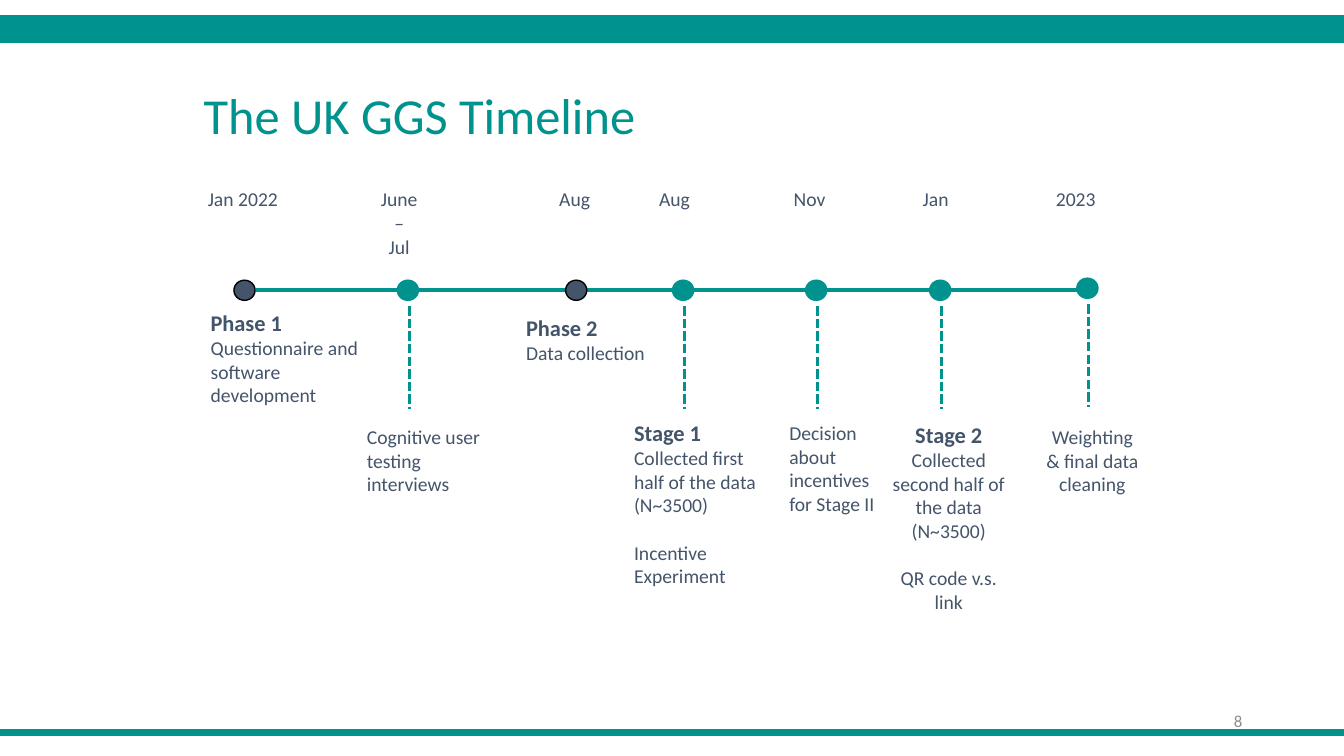
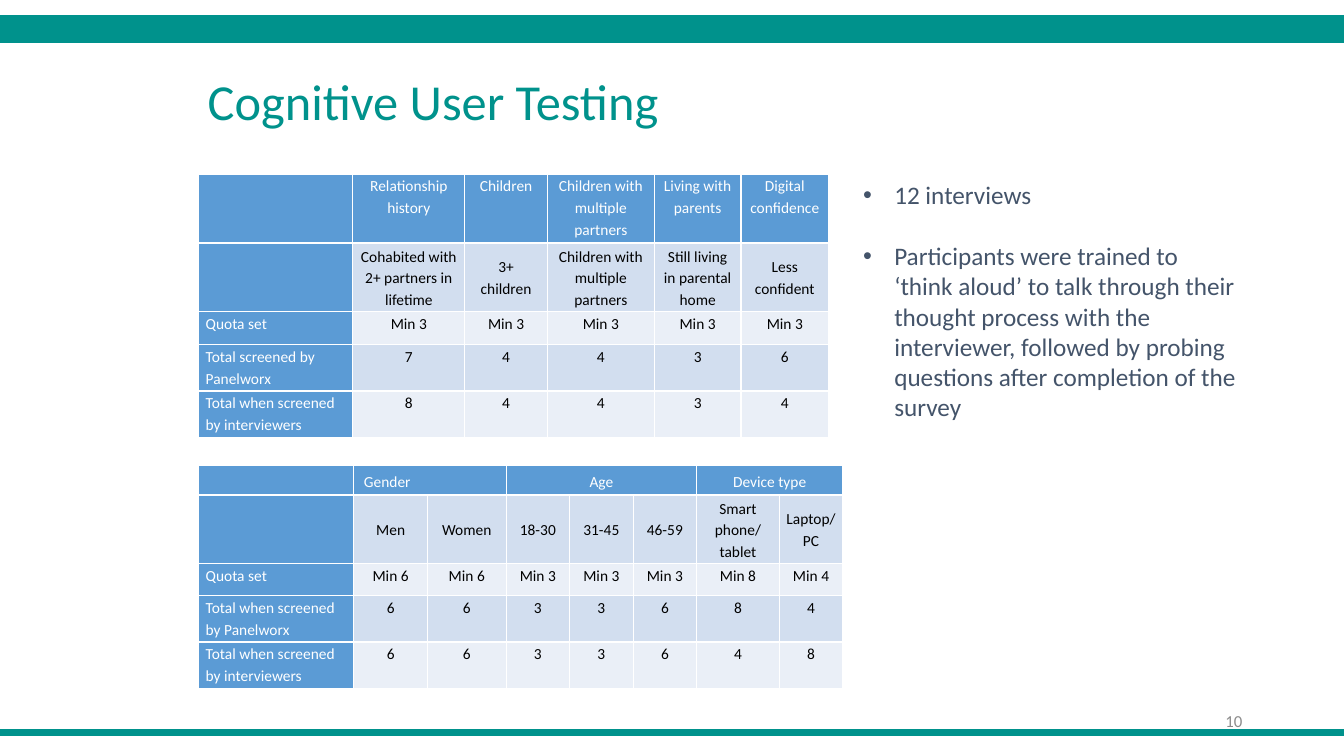
"""Build two survey slides: a project timeline and the user testing quotas."""
from lxml.etree import SubElement
from pptx import Presentation
from pptx.dml.color import RGBColor
from pptx.enum.dml import MSO_LINE
from pptx.enum.shapes import MSO_CONNECTOR, MSO_SHAPE
from pptx.enum.text import MSO_ANCHOR, MSO_AUTO_SIZE, PP_ALIGN
from pptx.oxml.ns import qn
from pptx.util import Inches, Pt

TEAL = RGBColor(0x00, 0x92, 0x8C)
SLATE = RGBColor(0x44, 0x54, 0x6A)
GREY = RGBColor(0x8C, 0x8C, 0x8C)
BLACK = RGBColor(0, 0, 0)
WHITE = RGBColor(0xFF, 0xFF, 0xFF)
BLUE = RGBColor(0x5B, 0x9B, 0xD5)
PALE = RGBColor(0xD2, 0xDE, 0xEF)
LIGHT = RGBColor(0xEA, 0xEF, 0xF7)
LEFT, MID, RIGHT = PP_ALIGN.LEFT, PP_ALIGN.CENTER, PP_ALIGN.RIGHT


def write(frame, lines, color, align=LEFT):
    """Fill a text frame with (text, size, bold, space before) lines."""
    frame.word_wrap = True
    for at, (text, size, bold, gap) in enumerate(lines):
        para = frame.add_paragraph() if at else frame.paragraphs[0]
        para.alignment = align
        para.space_before = Pt(gap)
        run = para.add_run()
        run.text = text
        font = run.font
        font.name, font.size, font.bold = "Calibri", Pt(size), bold
        font.color.rgb = color


def paint(shape, fill, line):
    """Give a shape a flat fill and a thin outline."""
    shape.shadow.inherit = False
    shape.fill.solid()
    shape.fill.fore_color.rgb = fill
    shape.line.color.rgb = line
    shape.line.width = Pt(1)


prs = Presentation()
prs.slide_width, prs.slide_height = Inches(13.33), Inches(7.5)

pages = []
for layout, title, number, left, top in [
    (5, "The UK GGS Timeline", "8", 1.92, 0.78),
    (1, "Cognitive User Testing", "10", 1.96, 0.65),
]:
    page = prs.slides.add_slide(prs.slide_layouts[layout])
    head = page.shapes.title
    head.left, head.top = Inches(left), Inches(top)
    head.width, head.height = Inches(9.4), Inches(0.71)
    head.text_frame.vertical_anchor = MSO_ANCHOR.TOP
    head.text_frame.auto_size = MSO_AUTO_SIZE.NONE
    write(head.text_frame, [(title, 36, False, 0)], TEAL)
    foot = page.shapes.add_textbox(Inches(9.42), Inches(6.95), Inches(3), Inches(0.4))
    foot.text_frame.vertical_anchor = MSO_ANCHOR.MIDDLE
    write(foot.text_frame, [(number, 12, False, 0)], GREY, RIGHT)
    for y, high in [(0.16, 0.26), (7.24, 0.05)]:
        band = page.shapes.add_shape(
            MSO_SHAPE.RECTANGLE, 0, Inches(y), prs.slide_width, Inches(high))
        paint(band, TEAL, TEAL)
    pages.append(page)
time, test = pages

events = [
    (2.43, 2.88, True, 2.41, ["Jan 2022"]),
    (4.05, 2.88, False, 3.96, ["June", "–", "Jul"]),
    (5.72, 2.88, True, 5.7, ["Aug"]),
    (6.78, 2.88, False, 6.69, ["Aug"]),
    (8.1, 2.88, False, 8.03, ["Nov"]),
    (9.33, 2.88, False, 9.28, ["Jan"]),
    (10.79, 2.86, False, 10.67, ["2023"]),
]
lines = [(2.54, 2.88, 10.83, 2.88, 3, None)]
lines += [(x + 0.01, y + 0.16, x + 0.01, y + 1.18, 2.25, MSO_LINE.SQUARE_DOT)
          for x, y, phase, mid, date in events if not phase]
for x1, y1, x2, y2, width, dash in lines:
    line = time.shapes.add_connector(
        MSO_CONNECTOR.STRAIGHT, Inches(x1), Inches(y1), Inches(x2), Inches(y2))
    line.line.color.rgb = TEAL
    line.line.width = Pt(width)
    if dash:
        line.line.dash_style = dash
    SubElement(line._element.spPr, qn("a:effectLst"))

for x, y, phase, mid, date in events:
    dot = time.shapes.add_shape(
        MSO_SHAPE.OVAL, Inches(x - 0.11), Inches(y - 0.1), Inches(0.21), Inches(0.2))
    paint(dot, SLATE if phase else TEAL, BLACK if phase else TEAL)
    box = time.shapes.add_textbox(
        Inches(mid - 0.55), Inches(1.81), Inches(1.1), Inches(0.34))
    write(box.text_frame, [(text, 14, False, 0) for text in date], SLATE, MID)

notes = [
    (1.99, 3.02, 1.81, 1.08, LEFT, "Phase 1",
     [("Questionnaire and software development", 0)]),
    (5.12, 3.07, 1.57, 0.61, LEFT, "Phase 2", [("Data collection", 0)]),
    (3.54, 4.17, 1.57, 0.81, LEFT, None, [("Cognitive user testing interviews", 0)]),
    (6.19, 4.11, 1.57, 1.78, LEFT, "Stage 1",
     [("Collected first half of the data", 0), ("(N~3500)", 0),
      ("Incentive", 17), ("Experiment", 0)]),
    (7.73, 4.13, 1.2, 1.04, LEFT, None,
     [("Decision about incentives for Stage II", 0)]),
    (8.7, 4.13, 1.42, 2.02, MID, "Stage 2",
     [("Collected second half of the data", 0), ("(N~3500)", 0),
      ("QR code v.s. link", 17)]),
    (10.12, 4.17, 1.43, 0.81, MID, None,
     [("Weighting", 0), ("& final data cleaning", 0)]),
]
for x, y, wide, high, align, name, body in notes:
    box = time.shapes.add_textbox(Inches(x), Inches(y), Inches(wide), Inches(high))
    text = [(name, 16, True, 0)] if name else []
    text += [(part, 14, False, gap) for part, gap in body]
    write(box.text_frame, text, SLATE, align)

grids = [
    (1.73, [1.53, 1.11, 0.82, 1.06, 0.86, 0.87], [0.68, 0.68, 0.33, 0.46, 0.46], [], [
        ["", "Relationship history", "Children", "Children with multiple partners",
         "Living with parents", "Digital confidence"],
        ["", "Cohabited with 2+ partners in lifetime", "3+ children",
         "Children with multiple partners", "Still living in parental home",
         "Less confident"],
        ["Quota set"] + ["Min 3"] * 5,
        ["Total screened by Panelworx", "7", "4", "4", "3", "6"],
        ["Total when screened by interviewers", "8", "4", "4", "3", "4"],
    ]),
    (4.62, [1.54, 0.73, 0.78, 0.63, 0.63, 0.63, 0.82, 0.63],
     [0.29, 0.68, 0.32, 0.46, 0.46], [(1, 2), (3, 5), (6, 7)], [
        ["", "Gender", "", "Age", "", "", "Device type", ""],
        ["", "Men", "Women", "18-30", "31-45", "46-59", "Smart phone/ tablet",
         "Laptop/ PC"],
        ["Quota set", "Min 6", "Min 6", "Min 3", "Min 3", "Min 3", "Min 8", "Min 4"],
        ["Total when screened by Panelworx", "6", "6", "3", "3", "6", "8", "4"],
        ["Total when screened by interviewers", "6", "6", "3", "3", "6", "4", "8"],
    ]),
]
for top, cols, rows, spans, data in grids:
    table = test.shapes.add_table(
        len(rows), len(cols), Inches(1.97), Inches(top),
        Inches(sum(cols)), Inches(sum(rows))).table
    for col, wide in zip(table.columns, cols):
        col.width = Inches(wide)
    for first, last in spans:
        table.cell(0, first).merge(table.cell(0, last))
    for r, row in enumerate(data):
        table.rows[r].height = Inches(rows[r])
        for c, text in enumerate(row):
            cell = table.cell(r, c)
            cell.margin_left = cell.margin_right = Inches(0.07)
            cell.margin_top = cell.margin_bottom = 0
            if r == 1 or (r == 0 and spans):
                cell.vertical_anchor = MSO_ANCHOR.MIDDLE
            props = cell._tc.get_or_add_tcPr()
            for side in "LRTB":
                edge = SubElement(props, qn("a:ln" + side), w=str(Pt(1)))
                SubElement(SubElement(edge, qn("a:solidFill")), qn("a:srgbClr"),
                           val=str(WHITE))
            head = r == 0 or c == 0
            cell.fill.solid()
            cell.fill.fore_color.rgb = BLUE if head else PALE if r % 2 else LIGHT
            para = cell.text_frame.paragraphs[0]
            para.line_spacing = 1.15
            if text:
                align = LEFT if c == 0 or text == "Gender" else MID
                write(cell.text_frame, [(text, 11, False, 0)],
                      WHITE if head else BLACK, align)
            else:
                para._p.get_or_add_endParaRPr().set("sz", "1100")
            if text == "Gender":
                cell.margin_left = Inches(0.1)

body = test.placeholders[1]
body.left, body.top = Inches(8.46), Inches(1.73)
body.width, body.height = Inches(3.96), Inches(2.83)
body.text_frame.auto_size = MSO_AUTO_SIZE.NONE
write(body.text_frame, [
    ("12 interviews", 18, False, 0),
    ("Participants were trained to ‘think aloud’ to talk through their thought "
     "process with the interviewer, followed by probing questions after "
     "completion of the survey", 18, False, 22),
], SLATE)
for para in body.text_frame.paragraphs:
    props = para._p.get_or_add_pPr()
    props.set("marL", str(Inches(0.31)))
    props.set("indent", str(-Inches(0.31)))

prs.save("out.pptx")
